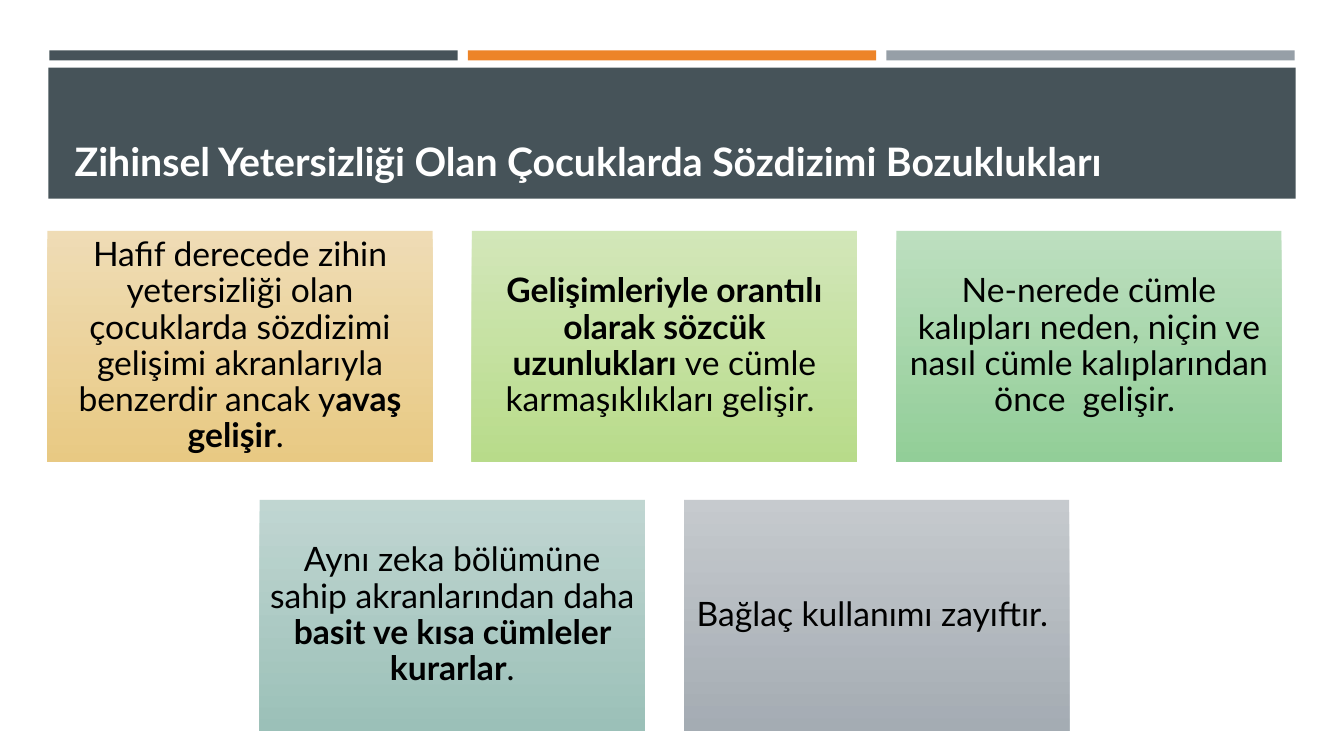
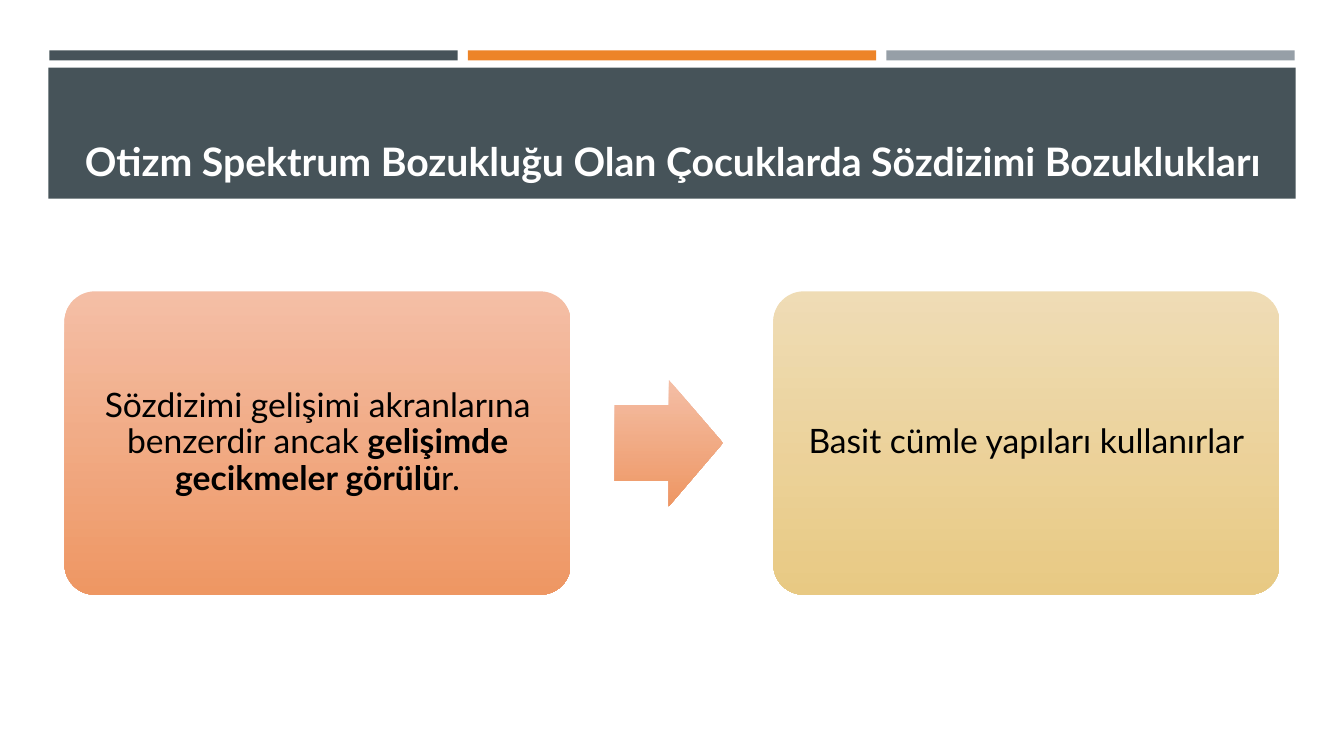
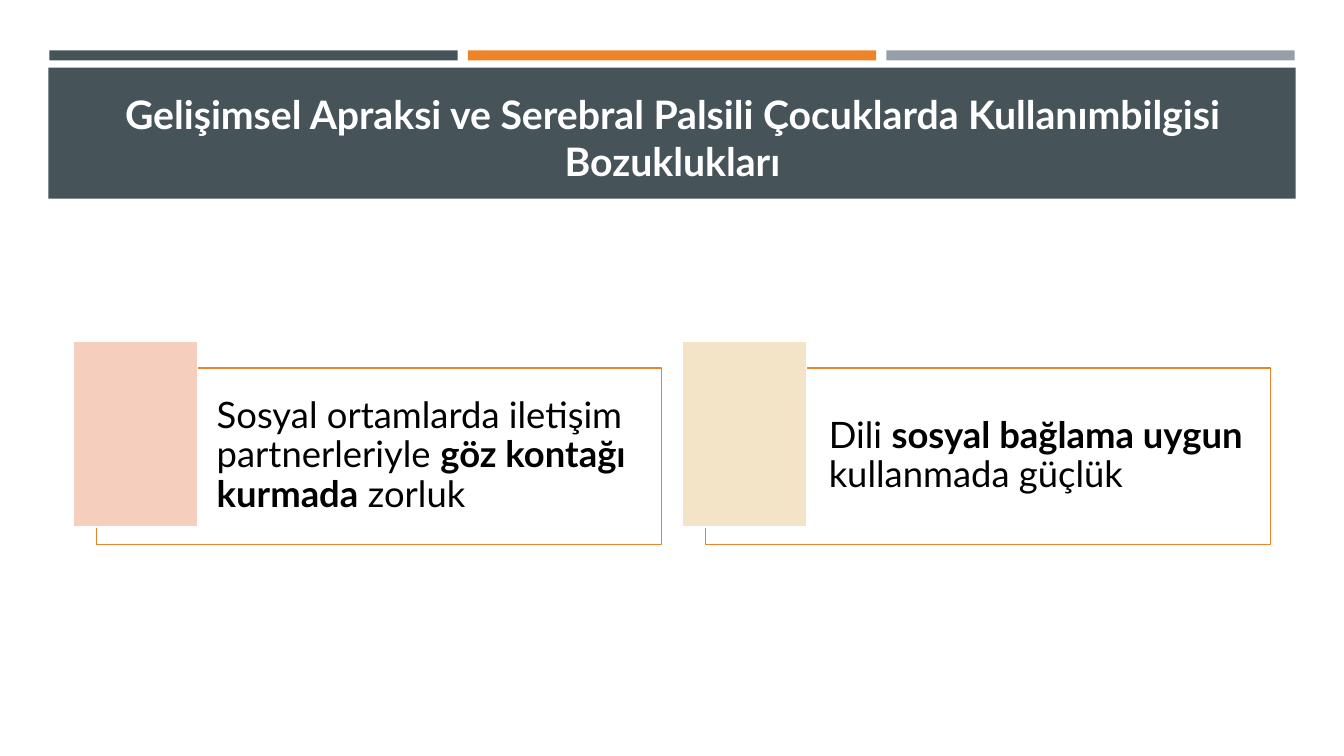
import lxml.etree
import pptx
import pptx.util
import pptx.dml.color
import pptx.enum.shapes
import pptx.enum.text
import pptx.oxml.ns

Inches = pptx.util.Inches
Pt = pptx.util.Pt
KIND = pptx.enum.shapes.MSO_SHAPE
ALIGN = pptx.enum.text.PP_ALIGN
ANCHOR = pptx.enum.text.MSO_ANCHOR

FONT = "Lato"
SLATE, ORANGE, GREY = "465359", "ED8428", "969FA7"
WHITE, BLACK = "FFFFFF", "000000"
PEACH = ("F3B89D", "ED8C53")
SAND = ("EED9AE", "E6C476")
LIME = ("CEE5B2", "B1D87E")
GREEN = ("B6DCB9", "87C98D")
TEAL = ("BAD2CD", "91BAB1")
STEEL = ("C0C5C9", "9BA3AB")


def tint(color, code):
    color.rgb = pptx.dml.color.RGBColor.from_string(code)


def fade(shape, share):
    for node in list(shape.element.spPr.iter(pptx.oxml.ns.qn("a:srgbClr"))):
        alpha = lxml.etree.SubElement(node, pptx.oxml.ns.qn("a:alpha"))
        alpha.set("val", str(share * 1000))


def draw(slide, kind, box, fill, line=None, share=None):
    shape = slide.shapes.add_shape(kind, *map(Inches, box))
    shape.shadow.inherit = False
    if isinstance(fill, tuple):
        shape.fill.gradient()
        shape.fill.gradient_angle = 270
        for stop, code, place in zip(shape.fill.gradient_stops, fill, (0, 1)):
            tint(stop.color, code)
            stop.position = place
    else:
        shape.fill.solid()
        tint(shape.fill.fore_color, fill)
    if share:
        fade(shape, share)
    if line:
        tint(shape.line.color, line)
        shape.line.width = Pt(1)
    else:
        shape.line.fill.background()
    return shape


def style(para, size, code, align):
    para.alignment = align
    para.font.name = FONT
    para.font.size = Pt(size)
    tint(para.font.color, code)


def write(shape, text, size=24, align=ALIGN.CENTER, pad=0.1, left=None):
    frame = shape.text_frame
    frame.word_wrap = True
    frame.vertical_anchor = ANCHOR.MIDDLE
    frame.margin_left = Inches(left or pad)
    frame.margin_right = frame.margin_top = frame.margin_bottom = Inches(pad)
    para = frame.paragraphs[0]
    para.line_spacing = 0.9
    style(para, size, BLACK, align)
    for index, part in enumerate(text.split("*")):
        if part:
            run = para.add_run()
            run.text = part
            run.font.bold = index % 2 == 1


def bands(slide):
    bars = [((0.49 + 4.15 * col, 0.5, 4.05, 0.1), code)
            for col, code in enumerate((SLATE, ORANGE, GREY))]
    bars.append(((0.48, 0.67, 12.37, 1.3), SLATE))
    for index, (box, code) in enumerate(bars):
        node = draw(slide, KIND.RECTANGLE, box, code).element
        node.nvSpPr.cNvPr.set("id", str(20 + index))
        slide.slide_layout.shapes.element.append(node)


def start(deck, text, align=ALIGN.CENTER):
    slide = deck.slides.add_slide(deck.slide_layouts[5])
    title = slide.shapes.title
    title.left, title.top, title.width, title.height = map(
        Inches, (0.64, 0.77, 12.06, 1.11))
    frame = title.text_frame
    frame.text = text
    frame.word_wrap = True
    frame.auto_size = pptx.enum.text.MSO_AUTO_SIZE.NONE
    frame.vertical_anchor = ANCHOR.BOTTOM
    para = frame.paragraphs[0]
    style(para, 28, WHITE, align)
    para.font.bold = True
    return slide


def grid(slide, box, rows):
    left, top, width, height = box
    wide, high = 3.82, 2.29
    step = (width - wide) / 2
    for row, tiles in enumerate(rows):
        side = left + step * (3 - len(tiles)) / 2
        for col, (fill, text) in enumerate(tiles):
            spot = (side + step * col, top + row * (height - high), wide, high)
            write(draw(slide, KIND.RECTANGLE, spot, fill, share=90), text)


def flow(slide, box, cards):
    left, top, width, height = box
    wide = 5.02
    for col, (fill, text) in enumerate(cards):
        spot = (left + col * (width - wide), top, wide, height)
        card = draw(slide, KIND.ROUNDED_RECTANGLE, spot, fill, share=90)
        card.adjustments[0] = 0.1
        write(card, text)
    spot = (left + wide + 0.44, top + (height - 1.25) / 2, 1.07, 1.25)
    arrow = draw(slide, KIND.RIGHT_ARROW, spot, PEACH, share=90)
    arrow.adjustments[0] = 0.6
    arrow.adjustments[1] = 0.5


def panel(slide, box, fill, text, inset):
    left, top, width, height = box
    spot = (left + 0.23, top + 0.26, width - 0.23, height - 0.26)
    frame = draw(slide, KIND.RECTANGLE, spot, WHITE, ORANGE, 40)
    write(frame, text, 26, ALIGN.LEFT, 0.11, inset)
    draw(slide, KIND.RECTANGLE, (left, top, 1.23, 1.84), fill, WHITE)


def main():
    deck = pptx.Presentation()
    deck.slide_width, deck.slide_height = Inches(13.33), Inches(7.5)

    slide = start(
        deck, "Zihinsel Yetersizliği Olan Çocuklarda Sözdizimi Bozuklukları",
        ALIGN.LEFT)
    bands(slide)
    grid(slide, (0.47, 2.29, 12.24, 4.96), [
        [(SAND, "Hafif derecede zihin yetersizliği olan çocuklarda sözdizimi "
                "gelişimi akranlarıyla benzerdir ancak y*avaş gelişir*. "),
         (LIME, "*Gelişimleriyle orantılı olarak sözcük uzunlukları *"
                "ve cümle karmaşıklıkları gelişir. "),
         (GREEN, "Ne-nerede cümle kalıpları neden, niçin ve nasıl cümle "
                 "kalıplarından önce  gelişir. ")],
        [(TEAL, "Aynı zeka bölümüne sahip akranlarından daha "
                "*basit ve kısa cümleler kurarlar*."),
         (STEEL, "Bağlaç kullanımı zayıftır. ")]])

    slide = start(
        deck, "Otizm Spektrum Bozukluğu Olan Çocuklarda Sözdizimi Bozuklukları")
    flow(slide, (0.64, 2.89, 12.05, 3.01), [
        (PEACH, "Sözdizimi gelişimi akranlarına benzerdir ancak "
                "*gelişimde gecikmeler görülü*r."),
        (SAND, "Basit cümle yapıları kullanırlar")])

    slide = start(
        deck, "Gelişimsel Apraksi ve Serebral Palsili Çocuklarda "
              "Kullanımbilgisi Bozuklukları")
    panel(slide, (0.73, 3.39, 5.83, 2.01), "F6CEBE",
          "Sosyal ortamlarda iletişim partnerleriyle "
          "*göz kontağı kurmada* zorluk", 1.19)
    panel(slide, (6.77, 3.39, 5.83, 2.01), "F3E4C8",
          "Dili *sosyal bağlama uygun *kullanmada güçlük", 1.22)

    deck.save("out.pptx")


if __name__ == "__main__":
    main()
